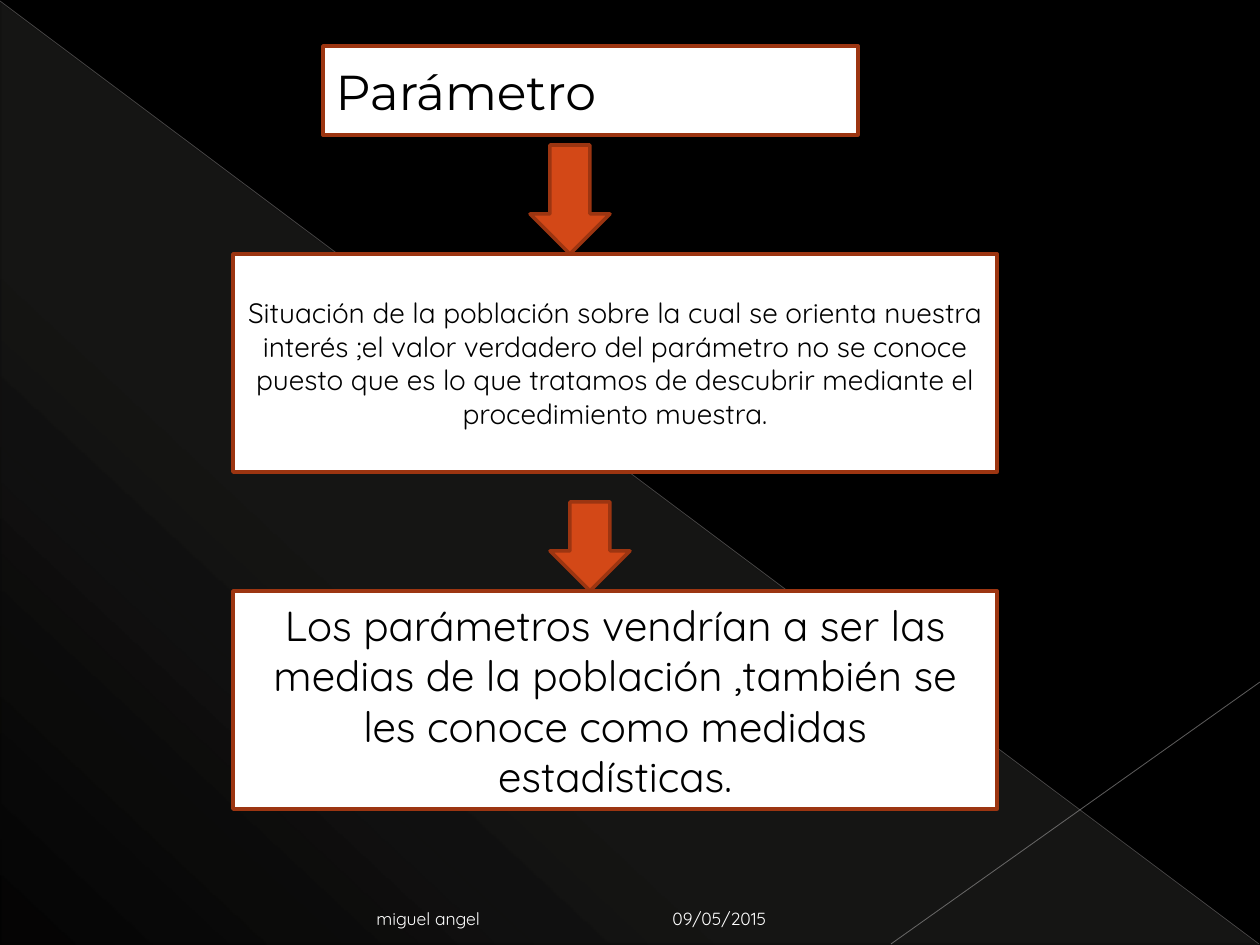
from lxml import etree
from pptx import Presentation
from pptx import util as u
from pptx.dml.color import RGBColor
from pptx.enum import shapes, text
from pptx.oxml import parse_xml
from pptx.oxml.ns import nsdecls, qn

PX = 914400 / 126  # EMU in one px
COLORS = {
    "back": "000000", "paper": "FFFFFF", "ink": "000000",
    "accent": "D34817", "edge": "9C3511", "glow": "E9E5DC",
    "diagonal": "C1BEBE", "corner": "C7C5C5", "footer": "FFFFFF",
}
HEADING, BODY = "Montserrat", "Quicksand"


def px(*lengths):
    return [u.Emu(round(length * PX)) for length in lengths]


def rgb(name):
    return RGBColor.from_string(COLORS[name])


class SlideBuilder:
    def __init__(self, slide):
        self.slide = slide
        slide.background.fill.solid()
        slide.background.fill.fore_color.rgb = rgb("back")

    def paint(self, shape, fill):
        shape.fill.solid()
        shape.fill.fore_color.rgb = rgb(fill)
        shape.line.color.rgb = rgb("edge")
        shape.line.width = u.Pt(2)

    def set_text(self, shape, words, size, font=BODY, color="ink",
                 align=text.PP_ALIGN.LEFT, anchor=text.MSO_ANCHOR.MIDDLE):
        frame = shape.text_frame
        frame.text = words
        frame.word_wrap = True
        frame.auto_size = text.MSO_AUTO_SIZE.NONE
        frame.vertical_anchor = anchor
        para = frame.paragraphs[0]
        para.alignment = align
        span = para.runs[0].font
        span.name, span.size, span.color.rgb = font, u.Pt(size), rgb(color)

    def shape(self, kind, left, top, width, height):
        shape = self.slide.shapes.add_shape(kind, *px(left, top, width, height))
        shape.shadow.inherit = False
        return shape

    def title(self, words, left, top, width, height):
        title = self.slide.shapes.title
        title.left, title.top, title.width, title.height = px(left, top, width, height)
        self.paint(title, "paper")
        self.set_text(title, words, 28, HEADING)

    def box(self, words, size, left, top, width, height):
        box = self.shape(shapes.MSO_SHAPE.RECTANGLE, left, top, width, height)
        self.paint(box, "paper")
        self.set_text(box, words, size, align=text.PP_ALIGN.CENTER)

    def arrow(self, left, top, width, height):
        arrow = self.shape(shapes.MSO_SHAPE.DOWN_ARROW, left, top, width, height)
        self.paint(arrow, "accent")

    def label(self, words, left, top, width, height):
        label = self.slide.shapes.add_textbox(*px(left, top, width, height))
        self.set_text(label, words, 10, color="footer", anchor=text.MSO_ANCHOR.BOTTOM)

    def line(self, start, end, color, width, opacity):
        line = self.slide.shapes.add_connector(
            shapes.MSO_CONNECTOR.STRAIGHT, *px(*start, *end))
        line.line.color.rgb = rgb(color)
        line.line.width = u.Pt(width)
        tint = line._element.spPr.find(".//" + qn("a:srgbClr"))
        etree.SubElement(tint, qn("a:alpha"), val=str(opacity * 1000))
        etree.SubElement(line._element.spPr, qn("a:effectLst"))

    def glow(self, left, top, width, height, stops, angle):
        glow = self.shape(shapes.MSO_SHAPE.RIGHT_TRIANGLE, left, top, width, height)
        glow.line.fill.background()
        marks = "".join(
            f'<a:gs pos="{place * 1000}"><a:srgbClr val="{COLORS["glow"]}">'
            f'<a:alpha val="{opacity * 1000}"/></a:srgbClr></a:gs>'
            for place, opacity in stops)
        gradient = parse_xml(
            f'<a:gradFill {nsdecls("a")}><a:gsLst>{marks}</a:gsLst>'
            f'<a:lin ang="{angle * 60000}" scaled="0"/></a:gradFill>')
        glow._element.spPr.find(qn("a:prstGeom")).addnext(gradient)


def main():
    deck = Presentation()
    deck.slide_width, deck.slide_height = px(1260, 945)
    page = SlideBuilder(deck.slides.add_slide(deck.slide_layouts[5]))

    # Backdrop
    page.glow(1, 2, 1258, 942, [(0, 10), (70, 8), (100, 1)], 133)
    page.line((0, 1), (1259, 944), "diagonal", 0.39, 35)
    page.line((1260, 682), (891, 944), "corner", 0.47, 45)

    # Title and the two statements, joined by arrows
    page.title("Parámetro", 323, 46, 535, 89)
    page.arrow(530, 145, 80, 109)
    page.box("Situación de la población sobre la cual se orienta nuestra interés ;"
             "el valor verdadero del parámetro no se conoce puesto que es lo que "
             "tratamos de descubrir mediante el procedimiento muestra.",
             16, 233, 254, 764, 218)
    page.arrow(550, 502, 80, 89)
    page.box("Los parámetros vendrían a ser las medias de la población ,"
             "también se les conoce como medidas estadísticas.",
             24, 233, 591, 764, 218)

    # Footer
    page.label("miguel angel", 364, 893, 286, 42)
    page.label("09/05/2015", 660, 893, 294, 42)

    deck.save("out.pptx")


if __name__ == "__main__":
    main()
